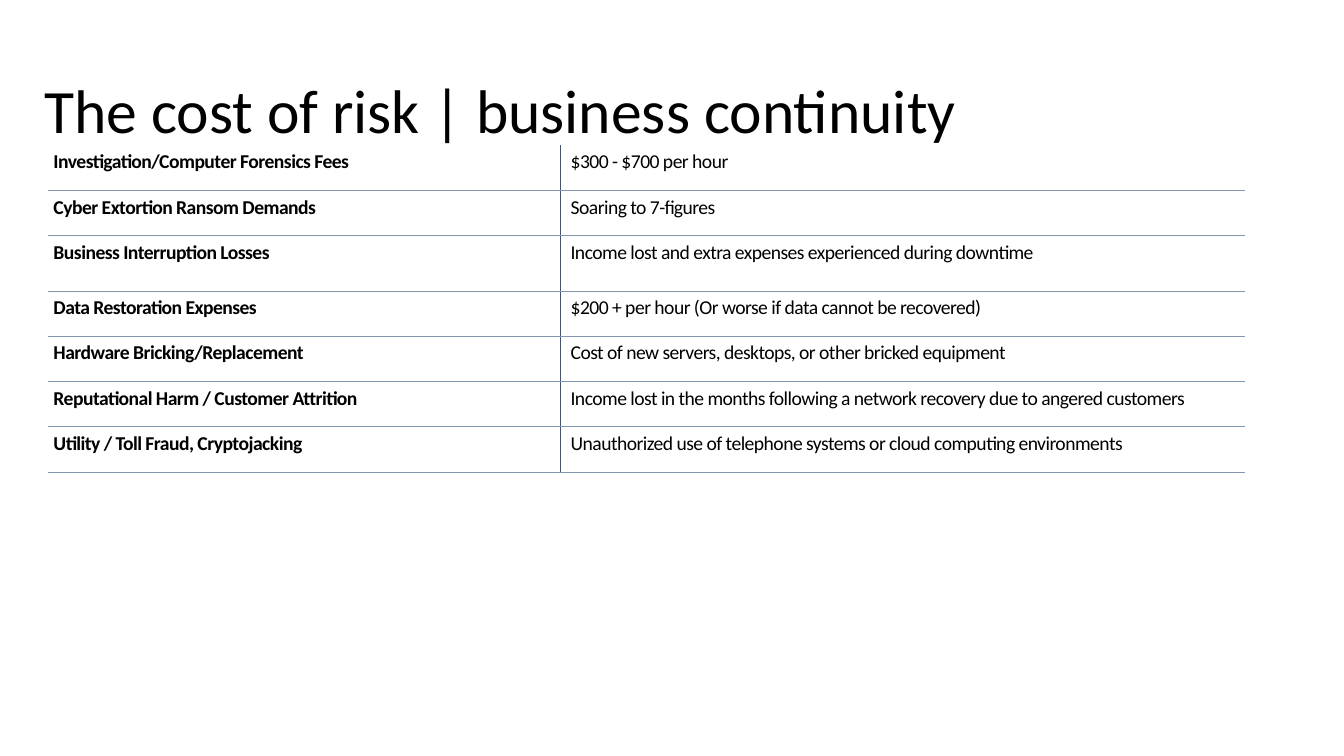
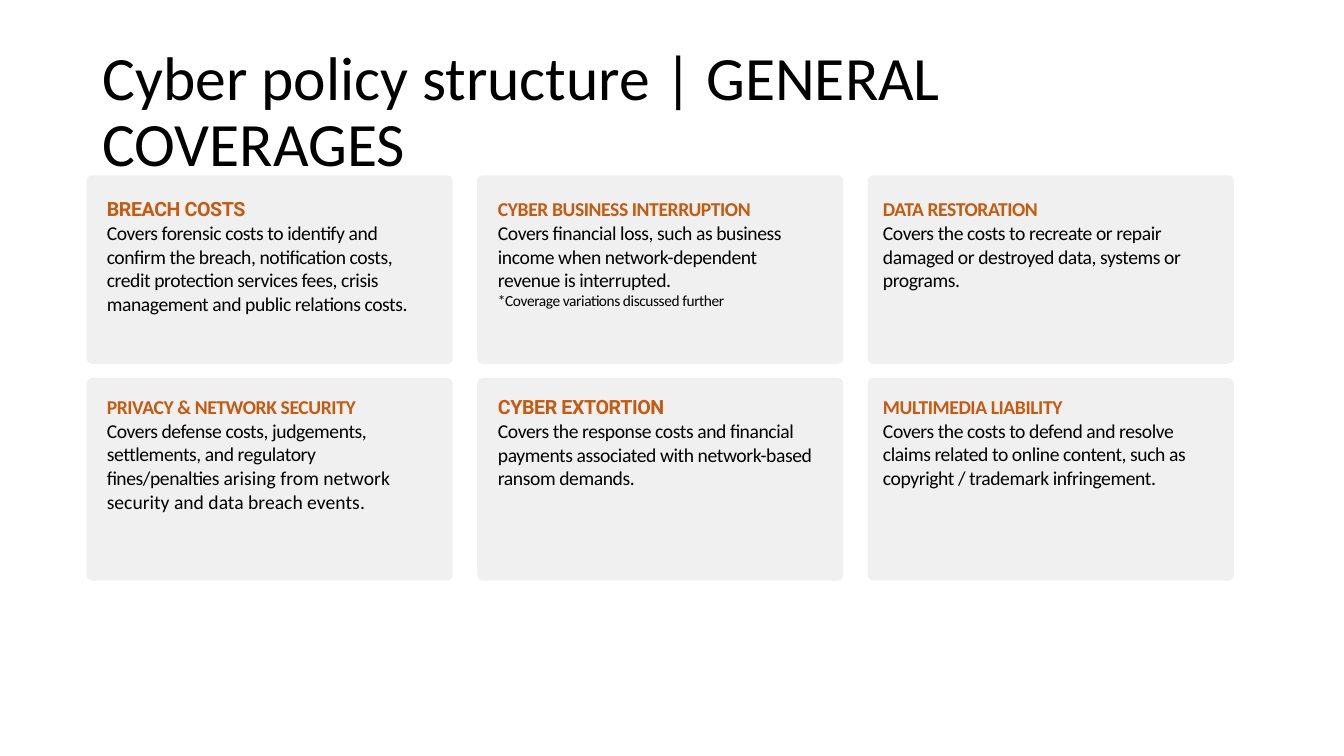
from dataclasses import dataclass

from pptx import Presentation
from pptx import util as u
from pptx.dml.color import RGBColor
from pptx.enum import shapes, text
from pptx.oxml import ns
from lxml import etree

Pt = u.Pt

BLACK = RGBColor(0x00, 0x00, 0x00)
ORANGE = RGBColor(0xC5, 0x5A, 0x11)
CARD_GREY = RGBColor(0xF0, 0xF0, 0xF0)
ROW_RULE = RGBColor(0x84, 0x97, 0xB0)
COLUMN_RULE = RGBColor(0x44, 0x54, 0x6A)

BODY_FONT = "Calibri"
ACCENT_FONT = "Roboto"
NO_STYLE_TABLE = "{2D5ABB26-0587-4C30-8999-92F81FD0307C}"

TITLE_TOP, TITLE_HEIGHT = 28.8, 104.4

TABLE_LEFT, TABLE_TOP = 34.6, 103.7
COLUMN_WIDTHS = (365.8, 489.2)
ROW_HEIGHT, TALL_ROW_HEIGHT, TALL_ROW = 32.3, 39.6, 2
CELL_INSET, VALUE_INSET = 3.6, 7.2
COSTS = (
    ("Investigation/Computer Forensics Fees", "$300 - $700 per hour"),
    ("Cyber Extortion Ransom Demands", "Soaring to 7-figures"),
    ("Business Interruption Losses",
     "Income lost and extra expenses experienced during downtime"),
    ("Data Restoration Expenses",
     "$200 + per hour (Or worse if data cannot be recovered)"),
    ("Hardware Bricking/Replacement",
     "Cost of new servers, desktops, or other bricked equipment"),
    ("Reputational Harm / Customer Attrition",
     "Income lost in the months following a network recovery due to angered customers"),
    ("Utility / Toll Fraud, Cryptojacking",
     "Unauthorized use of telephone systems or cloud computing environments"),
)

CARD_LEFT, CARD_PITCH, CARD_WIDTH = 61.9, 279, 261.4
CARD_ROWS = ((125.3, 134.6), (270, 144.7))  # top, height
CARD_ROUNDING = 0.028
TEXT_LEFTS = (76.3, 355.7, 630.7)
TEXT_TOPS = (141, 282.4)


@dataclass(frozen=True)
class Style:
    size: float = 14
    spacing: float = -0.3
    bold: bool = False
    color: RGBColor = BLACK
    font: str = BODY_FONT


@dataclass(frozen=True)
class Coverage:
    column: int
    row: int
    width: float
    height: float
    heading: str
    body: tuple[tuple[str, Style], ...]
    note: str = ""
    heading_font: str = BODY_FONT


BODY = Style()
LOOSE = Style(spacing=0)
NOTE = Style(size=11)
TITLE = Style(size=44, spacing=0)
COST_NAME = Style(spacing=-0.4, bold=True)
COST_VALUE = Style(spacing=-0.4)

COVERAGES = (
    Coverage(0, 0, 237.6, 96.5, "BREACH COSTS",
             (("Covers forensic costs to identify and confirm the breach, notification "
               "costs, credit protection services fees, crisis management and public "
               "relations costs.", BODY),), heading_font=ACCENT_FONT),
    Coverage(1, 0, 208.8, 110.2, "CYBER BUSINESS INTERRUPTION",
             (("Covers financial loss, such as business income when network-dependent "
               "revenue is interrupted.", BODY),),
             note="*Coverage variations discussed further"),
    Coverage(2, 0, 218.9, 87.8, "DATA RESTORATION",
             (("Covers the costs to recreate or repair damaged or destroyed data, "
               "systems or programs.", BODY),)),
    Coverage(0, 1, 230.4, 103, "PRIVACY & NETWORK SECURITY",
             (("Covers defense costs, judgements, settlements, and regulatory "
               "fines/penalties ", BODY),
              ("arising from network security and data breach events", LOOSE),
              (".", BODY))),
    Coverage(1, 1, 231.8, 95, "CYBER EXTORTION",
             (("Covers the response costs and financial payments associated with "
               "network-based ransom demands.", BODY),), heading_font=ACCENT_FONT),
    Coverage(2, 1, 236.2, 95.8, "MULTIMEDIA LIABILITY",
             (("Covers the costs to defend and resolve claims related to online "
               "content, such as copyright / trademark infringement.", BODY),)),
)


def add_span(para, words: str, style: Style) -> None:
    span = para.add_run()
    span.text = words
    span.font.name = style.font
    span.font.size = Pt(style.size)
    span.font.bold = style.bold
    span.font.color.rgb = style.color
    if style.spacing:
        span.font._element.set("spc", str(round(style.spacing * 100)))


def add_titled_page(deck, title: str, left: float, width: float):
    page = deck.slides.add_slide(deck.slide_layouts.get_by_name("Title Only"))
    box = page.shapes.title
    box.left, box.top = Pt(left), Pt(TITLE_TOP)
    box.width, box.height = Pt(width), Pt(TITLE_HEIGHT)
    frame = box.text_frame
    frame.word_wrap = True
    frame.auto_size = text.MSO_AUTO_SIZE.NONE
    frame.vertical_anchor = text.MSO_ANCHOR.MIDDLE
    para = frame.paragraphs[0]
    para.alignment = text.PP_ALIGN.LEFT
    para.line_spacing = 0.9
    add_span(para, title, TITLE)
    return page


def add_border(cell, side: str, color: RGBColor) -> None:
    """Rule one side of a cell; add sides in the order L, R, T, B, before any fill."""
    line = etree.SubElement(cell._tc.get_or_add_tcPr(), ns.qn(f"a:ln{side}"),
                            w=str(int(Pt(0.25))))
    fill = etree.SubElement(line, ns.qn("a:solidFill"))
    etree.SubElement(fill, ns.qn("a:srgbClr"), val=str(color))


def add_cost_table(page) -> None:
    heights = [TALL_ROW_HEIGHT if index == TALL_ROW else ROW_HEIGHT
               for index in range(len(COSTS))]
    table = page.shapes.add_table(
        len(COSTS), len(COLUMN_WIDTHS), Pt(TABLE_LEFT), Pt(TABLE_TOP),
        Pt(sum(COLUMN_WIDTHS)), Pt(sum(heights))).table
    table.first_row = table.horz_banding = False
    table._tbl.tblPr.find(ns.qn("a:tableStyleId")).text = NO_STYLE_TABLE
    for column, width in zip(table.columns, COLUMN_WIDTHS):
        column.width = Pt(width)
    columns = (("R", COST_NAME, CELL_INSET), ("L", COST_VALUE, VALUE_INSET))
    for row_index, (cost, height) in enumerate(zip(COSTS, heights)):
        table.rows[row_index].height = Pt(height)
        for column_index, (side, style, inset) in enumerate(columns):
            cell = table.cell(row_index, column_index)
            cell.margin_left = Pt(inset)
            cell.margin_right = cell.margin_top = cell.margin_bottom = Pt(CELL_INSET)
            add_border(cell, side, COLUMN_RULE)
            if row_index:
                add_border(cell, "T", ROW_RULE)
            add_border(cell, "B", ROW_RULE)
            cell.fill.background()
            add_span(cell.text_frame.paragraphs[0], cost[column_index], style)


def add_card(page, coverage: Coverage) -> None:
    top, height = CARD_ROWS[coverage.row]
    card = page.shapes.add_shape(
        shapes.MSO_SHAPE.ROUNDED_RECTANGLE,
        Pt(CARD_LEFT + coverage.column * CARD_PITCH), Pt(top), Pt(CARD_WIDTH), Pt(height))
    card.adjustments[0] = CARD_ROUNDING
    card.shadow.inherit = False
    card.fill.solid()
    card.fill.fore_color.rgb = CARD_GREY
    card.line.fill.background()


def add_coverage_text(page, coverage: Coverage) -> None:
    box = page.shapes.add_textbox(
        Pt(TEXT_LEFTS[coverage.column]), Pt(TEXT_TOPS[coverage.row]),
        Pt(coverage.width), Pt(coverage.height))
    frame = box.text_frame
    frame.word_wrap = True
    frame.margin_left = frame.margin_right = frame.margin_top = frame.margin_bottom = 0
    heading = Style(bold=True, color=ORANGE, font=coverage.heading_font)
    add_span(frame.paragraphs[0], coverage.heading, heading)
    para = frame.add_paragraph()
    for words, style in coverage.body:
        add_span(para, words, style)
    if coverage.note:
        add_span(frame.add_paragraph(), coverage.note, NOTE)


def main() -> None:
    deck = Presentation()
    deck.slide_width, deck.slide_height = Pt(960), Pt(540)

    page = add_titled_page(deck, "The cost of risk | business continuity", 24.5, 870)
    add_cost_table(page)

    page = add_titled_page(deck, "Cyber policy structure | GENERAL COVERAGES", 66, 828)
    for coverage in COVERAGES:
        add_card(page, coverage)
        add_coverage_text(page, coverage)

    deck.save("out.pptx")


if __name__ == "__main__":
    main()
